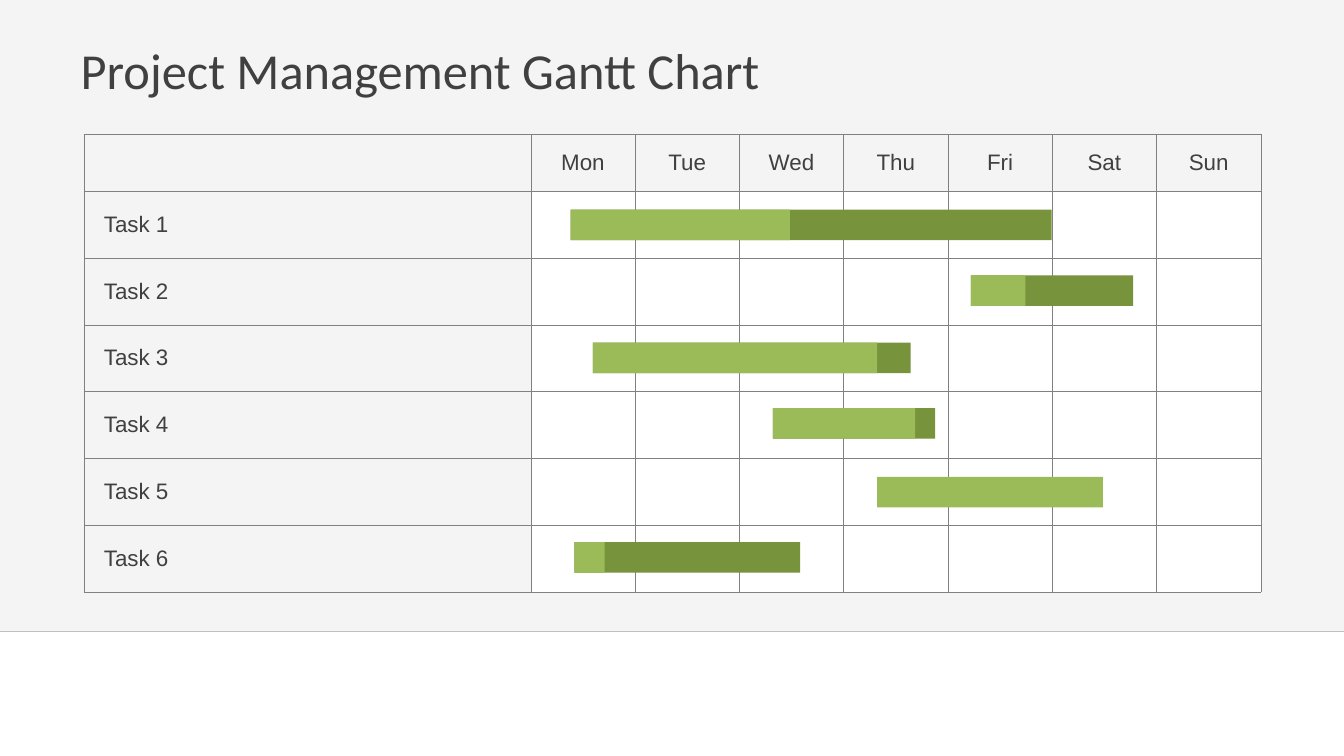
from lxml.etree import SubElement as Sub
from pptx import Presentation
from pptx.dml.color import RGBColor as Rgb
from pptx.enum.shapes import MSO_CONNECTOR as Link, MSO_SHAPE as Kind
from pptx.enum.text import MSO_ANCHOR as Anchor, PP_ALIGN as Align
from pptx.oxml.ns import qn
from pptx.util import Pt

COLORS = {
    "text": "404040", "panel": "D9D9D9", "rule": "BFBFBF", "grid": "808080",
    "cell": "FFFFFF", "done": "9BBB59", "left": "77933C",
}
WIDTH, HEIGHT = 960, 540
PANEL = 451.2
LEFT, TOP = 59.8, 96
LABEL, DAY = 319.3, 74.5
HEAD, ROW = 40.5, 47.75
BAR = 21.8
DAYS = ["Mon", "Tue", "Wed", "Thu", "Fri", "Sat", "Sun"]
# name, bar left, bar top, full width, finished width
TASKS = [
    ("Task 1", 407.6, 149.7, 343.6, 156.6),
    ("Task 2", 693.5, 196.7, 116, 39),
    ("Task 3", 423.5, 244.7, 227, 203),
    ("Task 4", 552.1, 291.5, 116, 101.7),
    ("Task 5", 626.5, 340.6, 161.3, 161.3),
    ("Task 6", 410.3, 387.2, 161.3, 21.6),
]
NO_STYLE = "{2D5ABB26-0587-4C30-8999-92F81FD0307C}"


def tint(name):
    return Rgb.from_string(COLORS[name])


class Deck:
    def __init__(self):
        self.show = Presentation()
        self.show.slide_width, self.show.slide_height = Pt(WIDTH), Pt(HEIGHT)
        self.slide = self.show.slides.add_slide(self.show.slide_layouts[6])
        self.shapes = self.slide.shapes

    def font(self, frame, face, size):
        for run in frame.paragraphs[0].runs:
            run.font.name, run.font.size = face, Pt(size)
            run.font.color.rgb = tint("text")

    def box(self, shapes, x, y, w, h, color, alpha=None):
        """Add a plain rectangle; alpha is its opacity in percent."""
        shape = shapes.add_shape(Kind.RECTANGLE, Pt(x), Pt(y), Pt(w), Pt(h))
        shape.shadow.inherit = False
        shape.line.fill.background()
        shape.fill.solid()
        shape.fill.fore_color.rgb = tint(color)
        if alpha is not None:
            node = shape._element.spPr.find(".//" + qn("a:srgbClr"))
            Sub(node, qn("a:alpha"), val=str(alpha * 1000))

    def title(self, text, x, y, w, h):
        frame = self.shapes.add_textbox(Pt(x), Pt(y), Pt(w), Pt(h)).text_frame
        frame.word_wrap = True
        frame.vertical_anchor = Anchor.MIDDLE
        frame.margin_left = frame.margin_right = Pt(9.6)
        frame.margin_top = frame.margin_bottom = Pt(4.8)
        frame.text = text
        self.font(frame, "Calibri", 36)

    def rule(self, y):
        line = self.shapes.add_connector(
            Link.STRAIGHT, 0, Pt(y), Pt(WIDTH), Pt(y))
        line.line.color.rgb = tint("rule")
        line.line.width = Pt(0.25)
        Sub(line._element.spPr, qn("a:effectLst"))

    def edge(self, cell):
        """Draw the four borders of a cell, placed before its fill."""
        props = cell._tc.get_or_add_tcPr()
        for spot, side in enumerate(("lnL", "lnR", "lnT", "lnB")):
            line = Sub(props, qn("a:" + side), w=str(Pt(0.25)))
            fill = Sub(line, qn("a:solidFill"))
            Sub(fill, qn("a:srgbClr"), val=COLORS["grid"])
            props.insert(spot, line)

    def grid(self, names, days):
        wide, high = LABEL + DAY * len(days), HEAD + ROW * len(names)
        frame = self.shapes.add_table(
            len(names) + 1, len(days) + 1, Pt(LEFT), Pt(TOP), Pt(wide), Pt(high))
        table = frame.table
        table.first_row = table.horz_banding = False
        table._tbl.tblPr.find(qn("a:tableStyleId")).text = NO_STYLE
        for i, col in enumerate(table.columns):
            col.width = Pt(DAY if i else LABEL)
        for i, row in enumerate(table.rows):
            row.height = Pt(ROW if i else HEAD)
            for j, cell in enumerate(row.cells):
                cell.vertical_anchor = Anchor.MIDDLE
                if i and j:
                    cell.fill.solid()
                    cell.fill.fore_color.rgb = tint("cell")
                else:
                    cell.fill.background()
                if j and not i:
                    cell.text_frame.text = days[j - 1]
                    cell.text_frame.paragraphs[0].alignment = Align.CENTER
                elif i and not j:
                    cell.text_frame.text = names[i - 1]
                    cell.margin_left = Pt(14.4)
                self.font(cell.text_frame, "Arial", 16)
                self.edge(cell)

    def bar(self, x, y, full, done):
        group = self.shapes.add_group_shape().shapes
        if done < full:
            self.box(group, x, y, full, BAR, "left")
        self.box(group, x, y, done, BAR, "done")


def main():
    deck = Deck()
    deck.box(deck.shapes, 0, 0, WIDTH, PANEL, "panel", 28)
    deck.title("Project Management Gantt Chart", 48, 21.6, 864, 56.2)
    deck.rule(PANEL)
    deck.grid([task[0] for task in TASKS], DAYS)
    for _, *place in TASKS:
        deck.bar(*place)
    deck.show.save("out.pptx")


if __name__ == "__main__":
    main()
